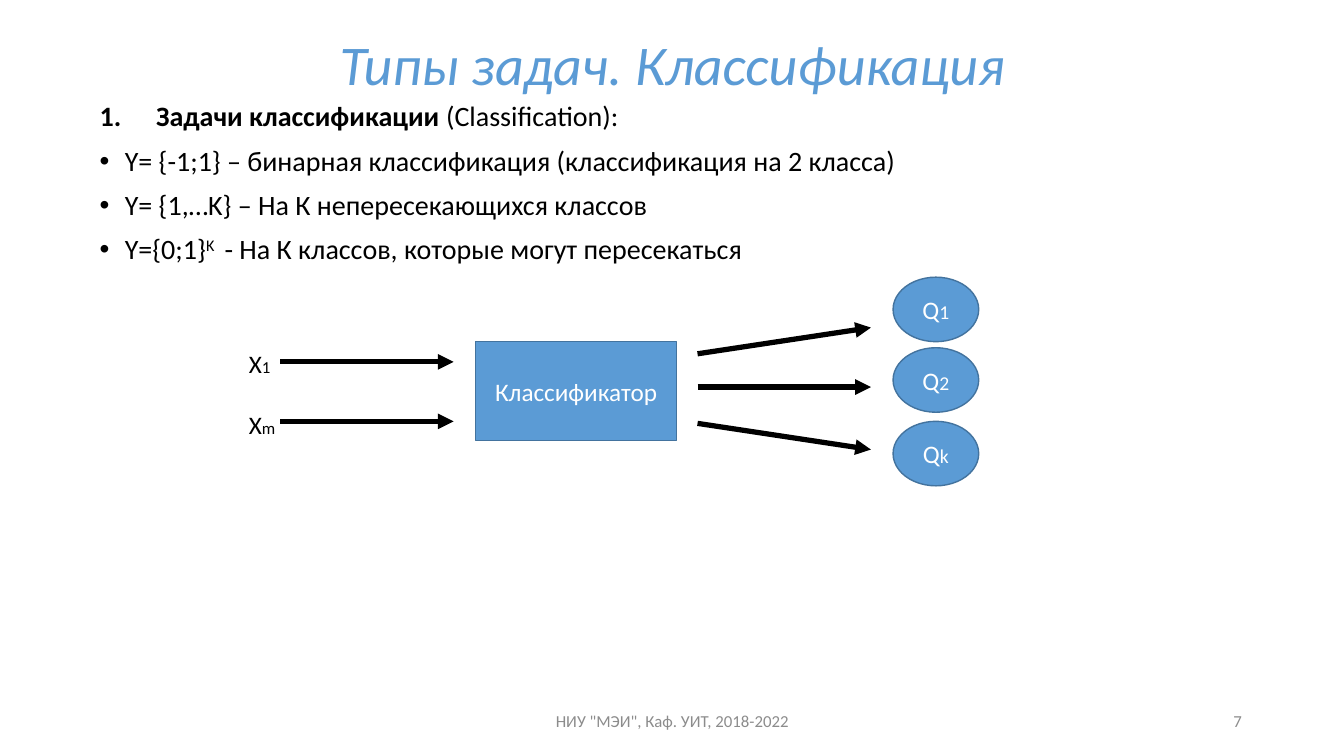
from dataclasses import dataclass

from lxml.etree import SubElement
from pptx import Presentation
from pptx.dml.color import RGBColor
from pptx.enum.shapes import MSO_CONNECTOR, MSO_SHAPE
from pptx.enum.text import MSO_ANCHOR, PP_ALIGN
from pptx.oxml.ns import qn
from pptx.util import Emu, Inches, Pt

COLORS = {"accent": "5B9BD5", "outline": "43739E", "text": "000000",
          "light": "FFFFFF", "muted": "8C8C8C"}
FONT = "Calibri"
COLUMNS, ROWS = 160, 90
SLIDE_WIDTH, SLIDE_HEIGHT = Inches(13.33), Inches(7.5)


@dataclass(frozen=True)
class Area:
    """Left, top, width and height in grid columns and rows."""
    left: float
    top: float
    width: float
    height: float


@dataclass(frozen=True)
class Span:
    text: str
    size: float
    bold: bool = False
    italic: bool = False
    raised: bool = False


@dataclass(frozen=True)
class Line:
    spans: tuple[Span, ...]
    bullet: str = ""
    indent: float = 0
    align: PP_ALIGN = PP_ALIGN.LEFT
    spacing: float = 1.0
    before: float = 0


@dataclass(frozen=True)
class Caption:
    area: Area
    lines: tuple[Line, ...]
    color: str
    anchor: MSO_ANCHOR = MSO_ANCHOR.MIDDLE
    wrap: bool = True


@dataclass(frozen=True)
class Node:
    form: MSO_SHAPE
    area: Area
    spans: tuple[Span, ...]


@dataclass(frozen=True)
class Arrow:
    left: float
    start_row: float
    end_row: float


def single(text: str, size: float, align: PP_ALIGN, italic: bool = False,
           spacing: float = 1.0) -> tuple[Line, ...]:
    return (Line((Span(text, size, italic=italic),), align=align, spacing=spacing),)


def item(bullet: str, indent: float, *spans: Span) -> Line:
    return Line(spans, bullet, indent, spacing=0.9, before=10)


def indexed(letter: str, index: str, index_size: float) -> tuple[Span, ...]:
    return Span(letter, 18), Span(index, index_size)


CAPTIONS = (
    Caption(Area(11.04, 2.16, 138, 11.76),
            single("Типы задач. Классификация", 40, PP_ALIGN.CENTER, True, 0.9), "accent"),
    Caption(Area(10.68, 11.64, 139.68, 22.08), (
        item("1.", 0.56, Span("Задачи классификации ", 20, bold=True),
             Span("(Classification):", 20)),
        item("•", 0.25,
             Span("Y= {-1;1} – бинарная классификация (классификация на 2 класса)", 20)),
        item("•", 0.25, Span("Y= {1,…K} – На К непересекающихся классов", 20)),
        item("•", 0.25, Span("Y={0;1}", 20), Span("K ", 20, raised=True),
             Span(" - На К классов, которые могут пересекаться", 20)),
    ), "text", MSO_ANCHOR.TOP),
    Caption(Area(28.44, 40.92, 5.64, 12.12),
            (Line(indexed("Х", "1", 12)), Line(indexed("Х", "m", 12), before=22)),
            "text", MSO_ANCHOR.TOP, wrap=False),
    Caption(Area(53.04, 83.4, 54, 4.8),
            single('НИУ "МЭИ", Каф. УИТ, 2018-2022', 12, PP_ALIGN.CENTER), "muted"),
    Caption(Area(113.04, 83.4, 36, 4.8), single("7", 12, PP_ALIGN.RIGHT), "muted"),
)

CLASSIFIER = Node(MSO_SHAPE.RECTANGLE, Area(56.64, 40.68, 23.88, 11.76),
                  (Span("Классификатор", 18),))
CLASSES = tuple(Node(MSO_SHAPE.OVAL, Area(106.32, top, 10.2, 7.68), indexed("Q", index, 14))
                for index, top in (("1", 33), ("2", 41.4), ("k", 50.16)))

ARROW_WIDTH = 20.64
INPUT_LEFT, OUTPUT_LEFT = 33.36, 83.04
ARROWS = (
    Arrow(INPUT_LEFT, 43.08, 43.08),
    Arrow(INPUT_LEFT, 50.16, 50.16),
    Arrow(OUTPUT_LEFT, 42.12, 39),
    Arrow(OUTPUT_LEFT, 46.08, 46.08),
    Arrow(OUTPUT_LEFT, 50.4, 53.52),
)


def col(count: float) -> Emu:
    return Emu(round(SLIDE_WIDTH * count / COLUMNS))


def row(count: float) -> Emu:
    return Emu(round(SLIDE_HEIGHT * count / ROWS))


def place(area: Area) -> tuple[Emu, Emu, Emu, Emu]:
    return col(area.left), row(area.top), col(area.width), row(area.height)


def rgb(name: str) -> RGBColor:
    return RGBColor.from_string(COLORS[name])


def add_bullet(paragraph, line: Line) -> None:
    properties = paragraph._p.get_or_add_pPr()
    properties.set("marL", str(Inches(line.indent)))
    properties.set("indent", str(-Inches(line.indent)))
    if line.bullet == "1.":
        SubElement(properties, qn("a:buAutoNum"), type="arabicPeriod")
    else:
        SubElement(properties, qn("a:buFont"), typeface="Arial")
        SubElement(properties, qn("a:buChar"), char=line.bullet)


def write_lines(frame, lines: tuple[Line, ...], color: str) -> None:
    for number, line in enumerate(lines):
        paragraph = frame.add_paragraph() if number else frame.paragraphs[0]
        paragraph.alignment = line.align
        paragraph.line_spacing = line.spacing
        paragraph.space_before = Pt(line.before)
        if line.bullet:
            add_bullet(paragraph, line)
        for span in line.spans:
            run = paragraph.add_run()
            run.text = span.text
            font = run.font
            font.name, font.size = FONT, Pt(span.size)
            font.bold, font.italic = span.bold, span.italic
            font.color.rgb = rgb(color)
            if span.raised:
                run._r.get_or_add_rPr().set("baseline", "30000")


def add_caption(slide, caption: Caption) -> None:
    frame = slide.shapes.add_textbox(*place(caption.area)).text_frame
    frame.word_wrap = caption.wrap
    frame.vertical_anchor = caption.anchor
    write_lines(frame, caption.lines, caption.color)


def add_node(slide, node: Node) -> None:
    shape = slide.shapes.add_shape(node.form, *place(node.area))
    shape.shadow.inherit = False
    shape.fill.solid()
    shape.fill.fore_color.rgb = rgb("accent")
    shape.line.color.rgb = rgb("outline")
    shape.line.width = Pt(1)
    shape.text_frame.vertical_anchor = MSO_ANCHOR.MIDDLE
    write_lines(shape.text_frame, (Line(node.spans, align=PP_ALIGN.CENTER),), "light")


def add_arrow(slide, arrow: Arrow) -> None:
    connector = slide.shapes.add_connector(
        MSO_CONNECTOR.STRAIGHT, col(arrow.left), row(arrow.start_row),
        col(arrow.left + ARROW_WIDTH), row(arrow.end_row))
    connector.line.color.rgb = rgb("text")
    connector.line.width = Pt(3.75)
    SubElement(connector.line._get_or_add_ln(), qn("a:tailEnd"), type="triangle")
    SubElement(connector._element.spPr, qn("a:effectLst"))


def main() -> None:
    presentation = Presentation()
    presentation.slide_width, presentation.slide_height = SLIDE_WIDTH, SLIDE_HEIGHT
    slide = presentation.slides.add_slide(presentation.slide_layouts[6])
    for caption in CAPTIONS:
        add_caption(slide, caption)
    for node in (CLASSIFIER, *CLASSES):
        add_node(slide, node)
    for arrow in ARROWS:
        add_arrow(slide, arrow)
    presentation.save("out.pptx")


if __name__ == "__main__":
    main()
